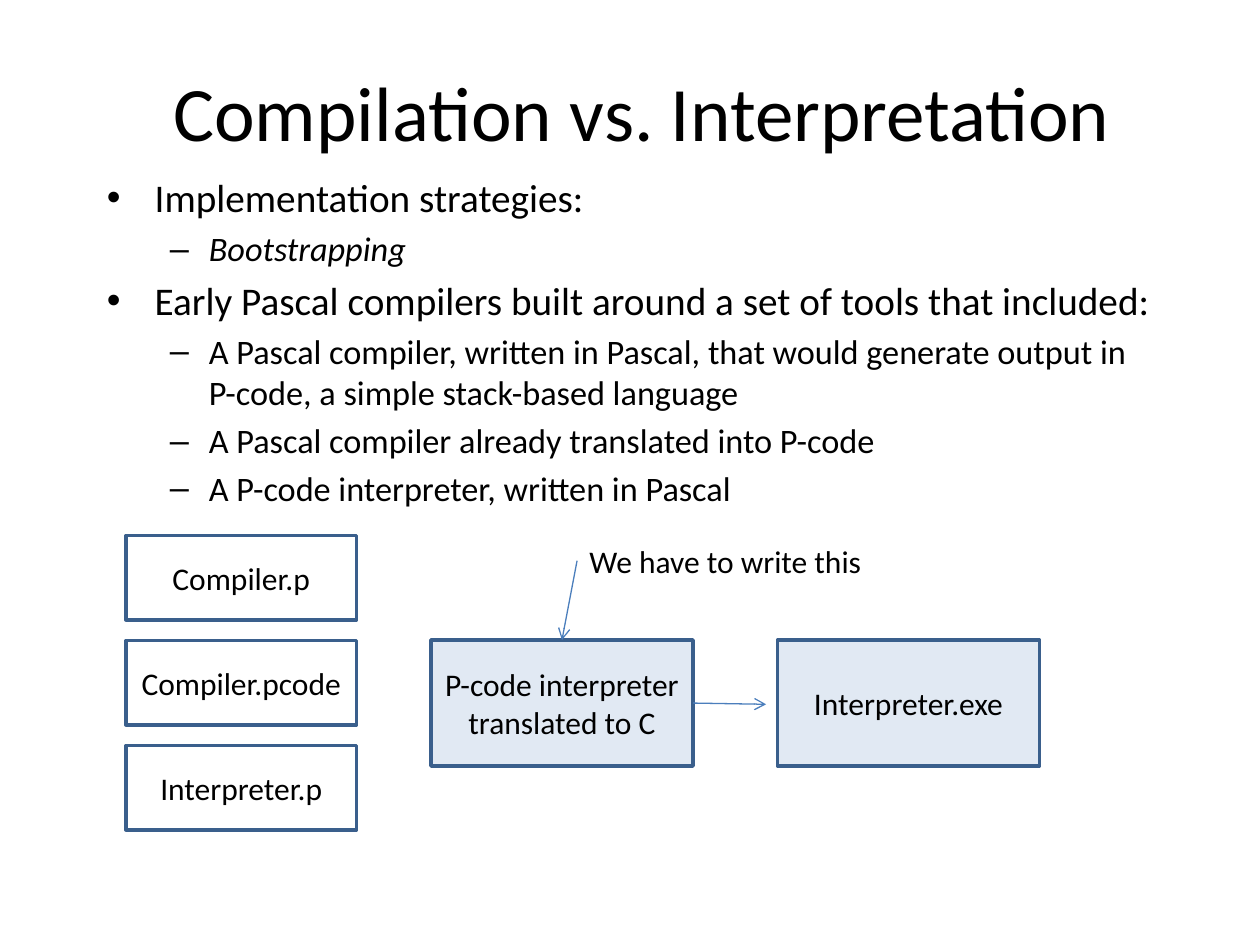
import lxml.etree
import pptx
import pptx.dml.color
import pptx.enum.shapes
import pptx.enum.text
import pptx.oxml
import pptx.oxml.ns
import pptx.util

Inches = pptx.util.Inches
Pt = pptx.util.Pt
PP_ALIGN = pptx.enum.text.PP_ALIGN
MIDDLE = pptx.enum.text.MSO_ANCHOR.MIDDLE
qn = pptx.oxml.ns.qn


def color(hex_string):
    return pptx.dml.color.RGBColor.from_string(hex_string)


def add_run(paragraph, text, size, italic=False):
    run = paragraph.add_run()
    run.text = text
    run.font.name = "Calibri"
    run.font.size = Pt(size)
    run.font.italic = italic
    run.font.color.rgb = color("000000")


presentation = pptx.Presentation()
presentation.slide_width = Inches(10)
presentation.slide_height = Inches(7.5)
slide = presentation.slides.add_slide(presentation.slide_layouts[5])

# Title
title = slide.shapes.title
title.left, title.top = Inches(0.44), Inches(0.25)
title.width, title.height = Inches(9.31), Inches(1.25)
title.text_frame.vertical_anchor = MIDDLE
title.text_frame.paragraphs[0].alignment = PP_ALIGN.CENTER
add_run(title.text_frame.paragraphs[0], "Compilation vs. Interpretation", 44)

# Bulleted text: level, text, italic
bullets = [
    (0, "Implementation strategies:", False),
    (1, "Bootstrapping", True),
    (0, "Early Pascal compilers built around a set of tools that included:", False),
    (1, "A Pascal compiler, written in Pascal, that would generate output in "
        "P-code, a simple stack-based language", False),
    (1, "A Pascal compiler already translated into P-code", False),
    (1, "A P-code interpreter, written in Pascal", False),
]
# Per level: bullet, size, left margin, hanging indent
levels = [("•", 22.4, 0.38, -0.38), ("–", 19.6, 0.81, -0.31)]
body = slide.shapes.add_textbox(Inches(0.75), Inches(1.33), Inches(8.5), Inches(2.83))
body.text_frame.word_wrap = True
for index, (level, text, italic) in enumerate(bullets):
    if index == 0:
        paragraph = body.text_frame.paragraphs[0]
    else:
        paragraph = body.text_frame.add_paragraph()
    bullet, size, margin, indent = levels[level]
    paragraph.level = level
    paragraph.space_before = Pt(0.2 * size)
    add_run(paragraph, text, size, italic)
    properties = paragraph._p.get_or_add_pPr()
    properties.set("marL", str(Inches(margin)))
    properties.set("indent", str(Inches(indent)))
    lxml.etree.SubElement(properties, qn("a:buFont")).set("typeface", "Arial")
    lxml.etree.SubElement(properties, qn("a:buChar")).set("char", bullet)

# Boxes: text, left, top, width, height, filled
file_names = ["Compiler.p", "Compiler.pcode", "Interpreter.p"]
boxes = [(name, 1, 4.25 + row * 5 / 6, 1.83, 0.67, False)
         for row, name in enumerate(file_names)]
boxes += [
    ("P-code interpreter translated to C", 3.42, 5.08, 2.08, 1, True),
    ("Interpreter.exe", 6.17, 5.08, 2.08, 1, True),
]
box_shapes = {}
for text, left, top, width, height, filled in boxes:
    box = slide.shapes.add_shape(
        pptx.enum.shapes.MSO_SHAPE.RECTANGLE,
        Inches(left), Inches(top), Inches(width), Inches(height))
    box.shadow.inherit = False
    box.line.color.rgb = color("3A5F8C")
    box.line.width = Pt(2)
    if filled:
        box.fill.solid()
        box.fill.fore_color.rgb = color("4F81BD")
        fill_color = box._element.spPr.find(qn("a:solidFill"))[0]
        lxml.etree.SubElement(fill_color, qn("a:alpha")).set("val", "17000")
    else:
        box.fill.background()
    box.text_frame.word_wrap = True
    box.text_frame.vertical_anchor = MIDDLE
    box.text_frame.paragraphs[0].alignment = PP_ALIGN.CENTER
    add_run(box.text_frame.paragraphs[0], text, 18)
    box_shapes[text] = box

# Note above the translated interpreter
note = slide.shapes.add_textbox(Inches(4.58), Inches(4.25), Inches(2.38), Inches(0.4))
note.text_frame.word_wrap = False
note.text_frame.auto_size = pptx.enum.text.MSO_AUTO_SIZE.SHAPE_TO_FIT_TEXT
add_run(note.text_frame.paragraphs[0], "We have to write this", 18)

# Arrows
arrows = []
for x1, y1, x2, y2 in [(4.58, 4.45, 4.46, 5.08), (5.5, 5.58, 6.08, 5.59)]:
    arrow = slide.shapes.add_connector(
        pptx.enum.shapes.MSO_CONNECTOR.STRAIGHT,
        Inches(x1), Inches(y1), Inches(x2), Inches(y2))
    arrow.line.color.rgb = color("4B7EBC")
    arrow.line.width = Pt(0.75)
    line = arrow.line._get_or_add_ln()
    lxml.etree.SubElement(line, qn("a:tailEnd")).set("type", "arrow")
    lxml.etree.SubElement(arrow._element.spPr, qn("a:effectLst"))
    arrows.append(arrow)
note_arrow, build_arrow = arrows
translated = box_shapes["P-code interpreter translated to C"]
note_arrow.begin_connect(note, 1)
note_arrow.end_connect(translated, 0)
build_arrow.begin_connect(translated, 3)

presentation.save("out.pptx")
